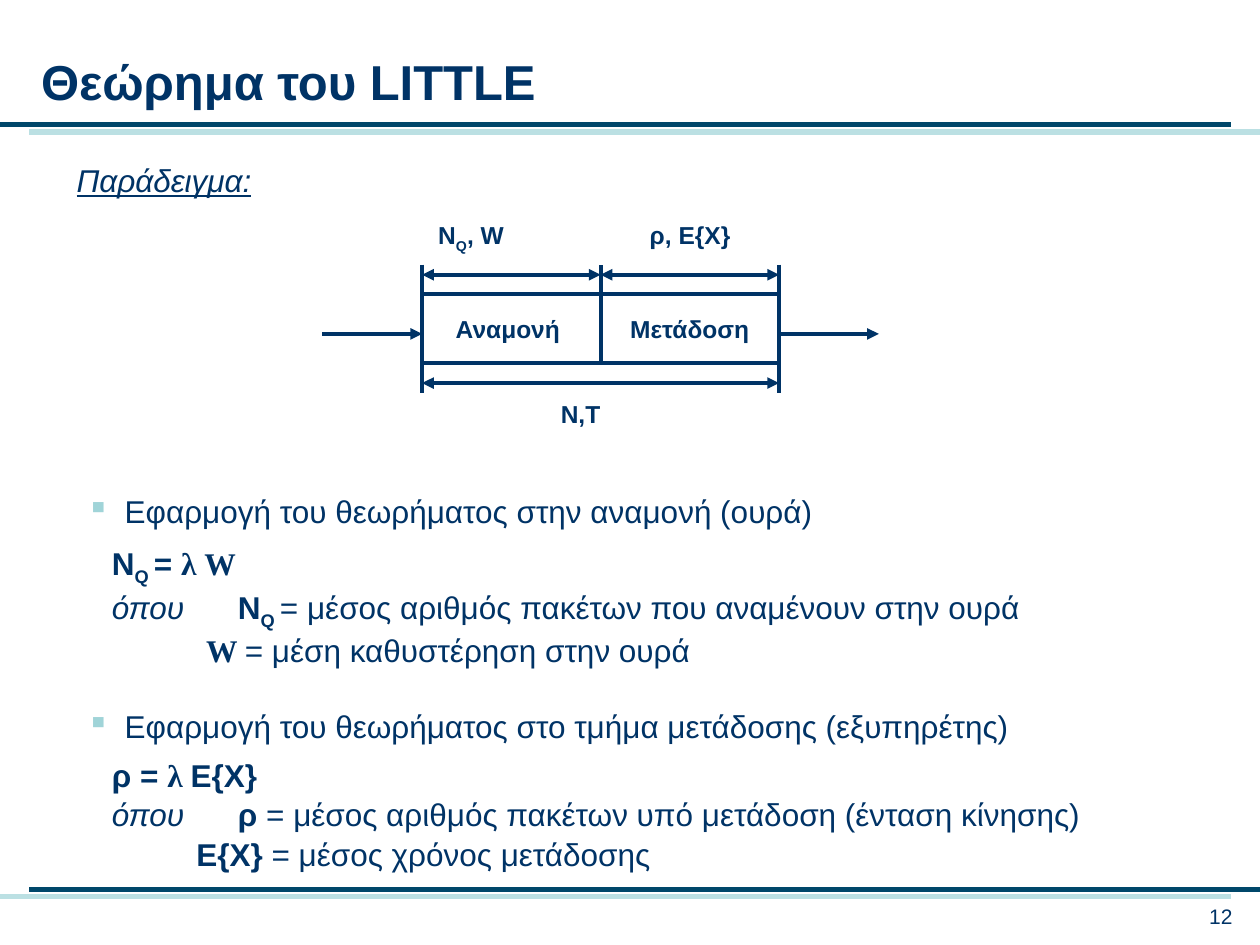
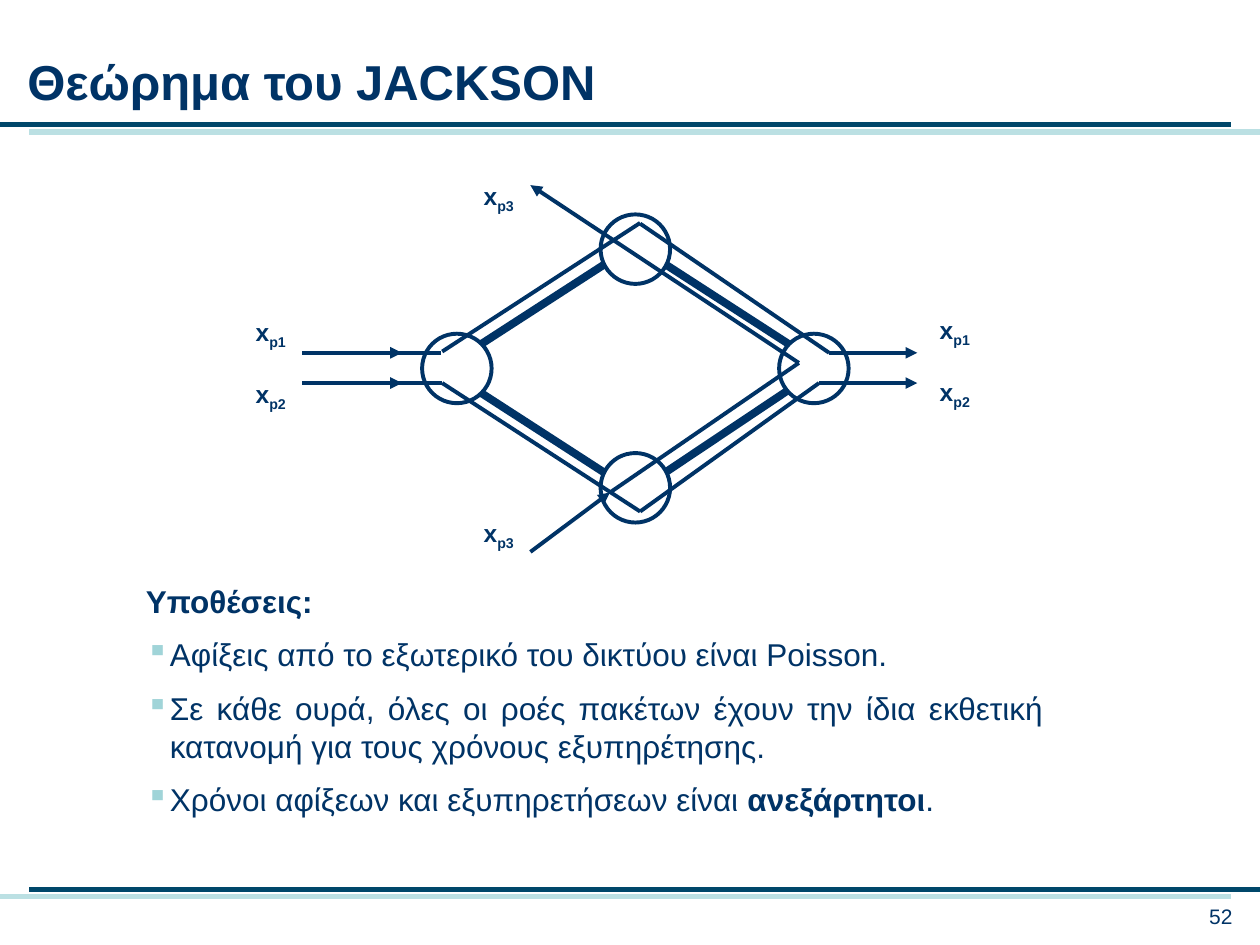
from dataclasses import dataclass, field

from lxml import etree
from pptx import Presentation
from pptx.dml.color import RGBColor
from pptx.enum.shapes import MSO_CONNECTOR, MSO_SHAPE
from pptx.enum.text import MSO_ANCHOR, PP_ALIGN
from pptx.oxml.ns import qn
from pptx.slide import Slide
from pptx.text.text import TextFrame
from pptx.util import Pt

NAVY = RGBColor(0x00, 0x33, 0x66)
TEAL = RGBColor(0x00, 0x47, 0x6A)
PALE = RGBColor(0xBB, 0xE0, 0xE3)
MINT = "A0D4D8"
WHITE = RGBColor(0xFF, 0xFF, 0xFF)

STRAIGHT = MSO_CONNECTOR.STRAIGHT
RECT, OVAL = MSO_SHAPE.RECTANGLE, MSO_SHAPE.OVAL
LEFT, MID, RIGHT, FULL = PP_ALIGN.LEFT, PP_ALIGN.CENTER, PP_ALIGN.RIGHT, PP_ALIGN.JUSTIFY
MIDDLE = MSO_ANCHOR.MIDDLE

WIDE, HIGH = 720, 540
BASE = {"name": "Arial", "size": Pt(18), "bold": False, "italic": False, "underline": False}
BOLD = {"bold": True}
SLANT = {"italic": True}
ROMAN = {"name": "Times New Roman", "bold": True}
SMALL = {"size": Pt(14), "bold": True}
TITLE = {"size": Pt(28), "bold": True}
FOOT = {"size": Pt(12)}


@dataclass
class Bit:
    text: str
    form: dict = field(default_factory=dict)
    drop: bool = False


@dataclass
class Para:
    bits: list[Bit]
    align: PP_ALIGN = LEFT
    gap: float = 0
    left: float = 0
    hang: float = 0
    tab: float = 0
    mark: bool = False


@dataclass
class Box:
    x: float
    y: float
    w: float
    h: float
    paras: list[Para]


@dataclass
class Seg:
    x1: float
    y1: float
    x2: float
    y2: float
    width: float = 2.25
    ends: tuple[str, ...] = ()
    color: RGBColor = NAVY


TAIL = ("tailEnd",)
BOTH = ("headEnd", "tailEnd")


def fill_text(frame: TextFrame, paras: list[Para]) -> None:
    for i, para in enumerate(paras):
        line = frame.add_paragraph() if i else frame.paragraphs[0]
        line.alignment = para.align
        line.space_before = Pt(para.gap)
        props = line._p.get_or_add_pPr()
        props.set("marL", str(Pt(para.left)))
        props.set("indent", str(Pt(-para.hang)))
        if para.mark:
            color = etree.SubElement(props, qn("a:buClr"))
            etree.SubElement(color, qn("a:srgbClr"), val=MINT)
            etree.SubElement(props, qn("a:buChar"), char="▪")
        else:
            etree.SubElement(props, qn("a:buNone"))
        if para.tab:
            stops = etree.SubElement(props, qn("a:tabLst"))
            etree.SubElement(stops, qn("a:tab"), pos=str(Pt(para.tab)), algn="l")
        for bit in para.bits:
            run = line.add_run()
            run.text = bit.text
            for key, value in {**BASE, **bit.form}.items():
                setattr(run.font, key, value)
            run.font.color.rgb = NAVY
            if bit.drop:
                run._r.get_or_add_rPr().set("baseline", "-25000")


def add_box(slide: Slide, box: Box) -> None:
    frame = slide.shapes.add_textbox(Pt(box.x), Pt(box.y), Pt(box.w), Pt(box.h)).text_frame
    frame.word_wrap = True
    fill_text(frame, box.paras)


def add_seg(slide: Slide, seg: Seg) -> None:
    line = slide.shapes.add_connector(STRAIGHT, Pt(seg.x1), Pt(seg.y1), Pt(seg.x2), Pt(seg.y2))
    line.line.color.rgb = seg.color
    line.line.width = Pt(seg.width)
    for end in seg.ends:
        etree.SubElement(line.line._get_or_add_ln(), qn(f"a:{end}"), type="triangle")
    etree.SubElement(line._element.spPr, qn("a:effectLst"))


def add_form(slide: Slide, kind: MSO_SHAPE, x: float, y: float, w: float, h: float, text: str = "") -> None:
    shape = slide.shapes.add_shape(kind, Pt(x), Pt(y), Pt(w), Pt(h))
    shape.shadow.inherit = False
    shape.line.color.rgb = NAVY
    shape.line.width = Pt(2.25)
    if not text:
        shape.fill.solid()
        shape.fill.fore_color.rgb = WHITE
        return
    shape.fill.background()
    shape.text_frame.word_wrap = False
    shape.text_frame.vertical_anchor = MIDDLE
    fill_text(shape.text_frame, [Para([Bit(text, SMALL)], MID)])


def add_label(slide: Slide, x: float, y: float, w: float, bits: list[Bit], align: PP_ALIGN = LEFT) -> None:
    add_box(slide, Box(x, y, w, 23.8, [Para(bits, align)]))


def add_frame(deck: Presentation, title: str, left: float, number: str) -> Slide:
    slide = deck.slides.add_slide(deck.slide_layouts[6])
    edge = 16.6
    for seg in (
        Seg(edge, 75.4, WIDE, 75.4, 3, color=PALE),
        Seg(0, 71.3, WIDE - edge, 71.3, 3, color=TEAL),
        Seg(0, 512.4, WIDE - edge, 512.4, 3, color=PALE),
        Seg(edge, 508.3, WIDE, 508.3, 3, color=TEAL),
    ):
        add_seg(slide, seg)
    add_box(slide, Box(left, 25.9, 669, 41, [Para([Bit(title, TITLE)])]))
    add_box(slide, Box(632.2, 512.6, 79.2, 21.6, [Para([Bit(number, FOOT)], RIGHT)]))
    return slide


def draw_little(deck: Presentation) -> None:
    slide = add_frame(deck, "Θεώρημα του LITTLE", 16.4, "12")
    start, step = 241.2, 102
    split, stop = start + step, start + 2 * step
    reach, flow = 57, 190.8
    for x, text in ((start, "Αναμονή "), (split, "Μετάδοση")):
        add_form(slide, RECT, x, 167.8, step, 39.8, text)
    for seg in (
        Seg(split, 157, stop, 157, ends=BOTH),
        Seg(start, 157, split, 157, ends=BOTH),
        Seg(start, 218.9, stop, 218.9, ends=BOTH),
        Seg(start, 151.2, start, 224.6),
        Seg(stop, 151.2, stop, 224.6),
        Seg(split, 208, split, 151.2),
        Seg(start - reach, flow, start, flow, ends=TAIL),
        Seg(stop, flow, stop + reach, flow, ends=TAIL),
    ):
        add_seg(slide, seg)
    add_label(slide, 280.8, 224.6, step, [Bit("N,T", SMALL)], MID)
    wait = [Bit("N", SMALL), Bit("Q", SMALL, True), Bit(", W", SMALL)]
    add_label(slide, 218.2, 122.4, step, wait, MID)
    add_label(slide, 343.4, 122.4, step, [Bit("ρ, E{X}", SMALL)], MID)

    add_box(slide, Box(36.7, 88.6, 136, 28.8, [
        Para([Bit("Παράδειγμα:", {"italic": True, "underline": True})])]))
    for y, text in (
        (277.9, "Εφαρμογή του θεωρήματος στην αναμονή (ουρά)"),
        (400.3, "Εφαρμογή του θεωρήματος στο τμήμα μετάδοσης (εξυπηρέτης)"),
    ):
        add_box(slide, Box(42.5, y, 584, 28.8, [Para([Bit(text)], left=21.7, hang=21.7, mark=True)]))
    queue = [Bit("N", BOLD), Bit("Q ", BOLD, True)]
    where = Bit("όπου\t", SLANT)
    for y, paras in (
        (307.4, [Para([*queue, Bit("= ", BOLD), Bit("λ W", ROMAN)])]),
        (332.6, [
            Para([where, *queue, Bit("= μέσος αριθμός πακέτων που αναμένουν στην ουρά")], tab=51.4),
            Para([Bit("W ", ROMAN), Bit("= μέση καθυστέρηση στην ουρά")], left=53.8),
        ]),
        (428.4, [Para([Bit("ρ = ", BOLD), Bit("λ ", ROMAN), Bit("E{Χ}", BOLD)])]),
        (450.7, [Para([where, Bit("ρ ", BOLD),
                       Bit("= μέσος αριθμός πακέτων υπό μετάδοση (ένταση κίνησης)")], tab=51.4)]),
    ):
        add_box(slide, Box(56.9, y, 587, 28.8 * len(paras), paras))
    add_box(slide, Box(105.1, 473.8, 288, 28.8, [
        Para([Bit("E{Χ} ", BOLD), Bit("= μέσος χρόνος μετάδοσης")])]))


def draw_jackson(deck: Presentation) -> None:
    slide = add_frame(deck, "Θεώρημα του JACKSON", 8.6, "52")
    hang = {"align": FULL, "left": 13.7, "hang": 13.7}
    paras = [Para([Bit("Υποθέσεις:", BOLD)], **hang)]
    for bits in (
        [Bit("Αφίξεις από το εξωτερικό του δικτύου είναι Poisson.")],
        [Bit("Σε κάθε ουρά, όλες οι ροές πακέτων έχουν την ίδια εκθετική "
             "κατανομή για τους χρόνους εξυπηρέτησης.")],
        [Bit("Χρόνοι αφίξεων και εξυπηρετήσεων είναι "), Bit("ανεξάρτητοι", BOLD), Bit(".")],
    ):
        paras.append(Para(bits, gap=9, mark=True, **hang))
    add_box(slide, Box(76.3, 329, 527, 149, paras))

    for seg in (
        Seg(371.5, 145.4, 450.7, 196.6, 4.5),
        Seg(275, 196.6, 354.2, 145.4, 4.5),
        Seg(275, 224.6, 354.2, 275.8, 4.5),
        Seg(371.5, 275.8, 456.5, 218.9, 4.5),
    ):
        add_seg(slide, seg)
    size, across, down = 39.7, 102, 68.2
    for col, row in ((-1, 0), (0, 1), (1, 0), (0, -1)):
        add_form(slide, OVAL, 343.2 + col * across, 190.7 + row * down, size, size)

    high, low = 201.6, 218.9
    for seg in (
        Seg(473.8, high, 524.2, high, ends=TAIL),
        Seg(172.8, high, 229.7, high, ends=TAIL),
        Seg(218.2, high, 252.3, high),
        Seg(365.8, 127.8, 473.8, high),
        Seg(252.7, 200.9, 365.8, 127.4),
        Seg(468, low, 524.2, low, ends=TAIL),
        Seg(252.7, low, 365.8, 292.3),
        Seg(365.8, 292.3, 468, low),
        Seg(172.8, low, 229.7, low, ends=TAIL),
        Seg(223.9, low, 252.7, low),
        Seg(348.5, 281.5, 456.5, 207.4),
        Seg(456.5, 207.4, 303.1, 105.8, ends=TAIL),
        Seg(303.1, 315.4, 348.5, 281.5, ends=TAIL),
    ):
        add_seg(slide, seg)
    for x, y, path in (
        (139, 177.8, "p1"), (529.9, 176.4, "p1"),
        (139, 213.1, "p2"), (529.9, 211.7, "p2"),
        (269.3, 292.3, "p3"), (269.3, 100.1, "p3"),
    ):
        add_label(slide, x, y, 51, [Bit("x", SMALL), Bit(path, SMALL, True)])


def main() -> None:
    deck = Presentation()
    deck.slide_width, deck.slide_height = Pt(WIDE), Pt(HIGH)
    draw_little(deck)
    draw_jackson(deck)
    deck.save("out.pptx")


if __name__ == "__main__":
    main()
